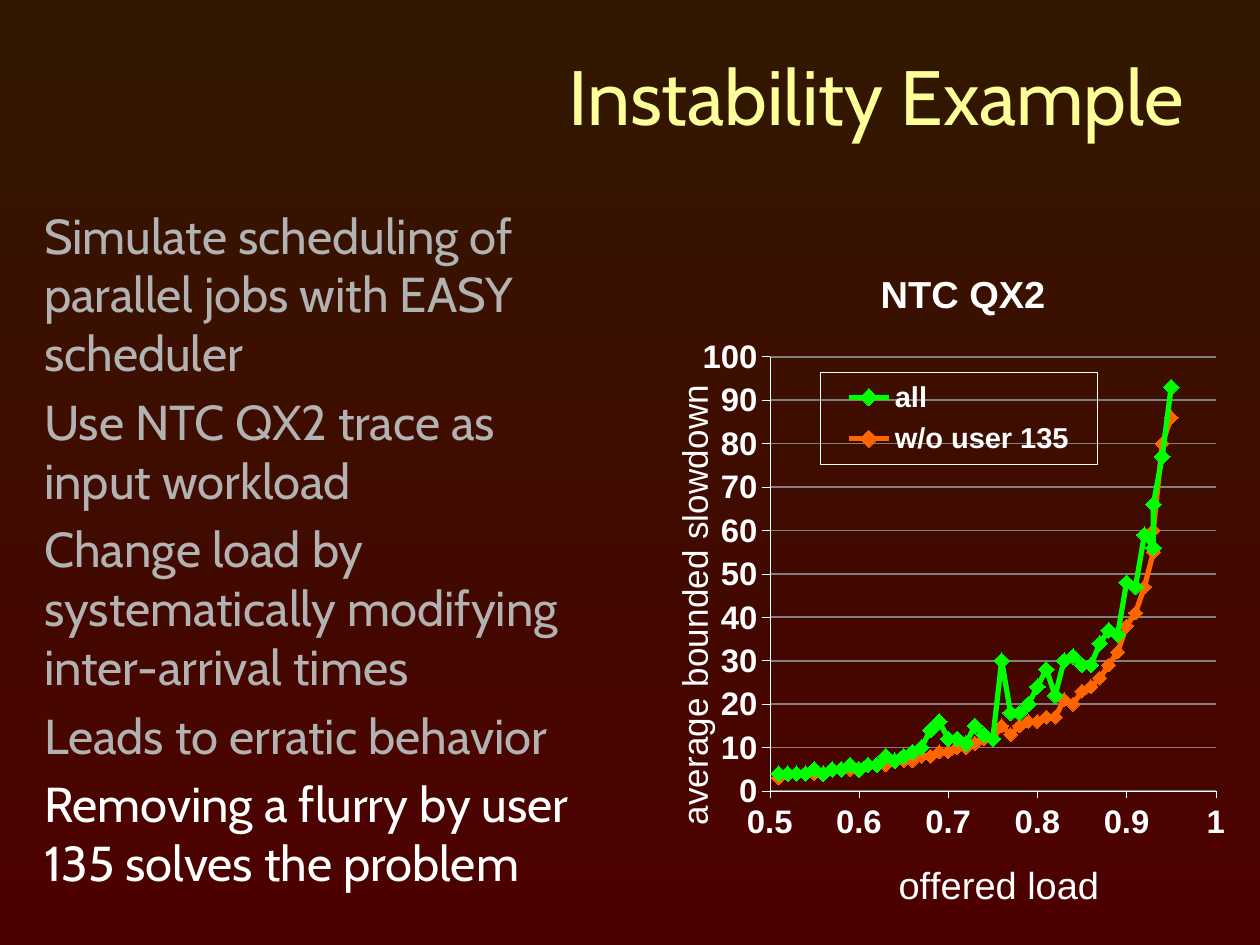
import pptx
import pptx.chart.data
import pptx.dml.color
import pptx.enum.chart
import pptx.enum.text
import pptx.oxml
import pptx.oxml.ns
import pptx.util

Cm = pptx.util.Cm
Pt = pptx.util.Pt

HUES = {
    "top": "311800", "base": "4D0000", "head": "FFFF99", "dim": "B2B2B2",
    "white": "FFFFFF", "grid": "808080", "green": "00FF00", "orange": "FF6600",
}
POINTS = [
    ("Simulate scheduling of parallel jobs with EASY scheduler", "dim"),
    ("Use NTC QX2 trace as input workload", "dim"),
    ("Change load by systematically modifying inter-arrival times", "dim"),
    ("Leads to erratic behavior", "dim"),
    ("Removing a flurry by user 135 solves the problem", "white"),
]
LOADS = [n / 100 for n in [*range(51, 94), 93, 94, 95]]
CURVES = [
    ("all", "green", 9,
     [4, 4, 4, 4, 5, 4, 5, 5, 6, 5, 6, 6, 8, 7, 8, 9, 10, 14, 16, 12, 12, 11, 15,
      13, 12, 30, 18, 18, 20, 24, 28, 22, 30, 31, 29, 29, 34, 37, 36, 48, 47, 59,
      56, 66, 77, 93]),
    ("w/o user 135", "orange", 8,
     [3, 4, 4, 4, 4, 4, 5, 5, 5, 5, 6, 6, 6, 7, 7, 7, 8, 8, 9, 9, 10, 10, 11, 12,
      12, 15, 13, 15, 16, 16, 17, 17, 21, 20, 23, 24, 26, 29, 32, 38, 41, 47, 55,
      60, 80, 86]),
]


def tint(name):
    return pptx.dml.color.RGBColor.from_string(HUES[name])


def style(font, face, size, hue, bold=False):
    font.name = face
    font.size = Pt(size)
    font.bold = bold
    font.color.rgb = tint(hue)


def stroke(line, hue, width):
    line.color.rgb = tint(hue)
    line.width = Pt(width)


def add_back(slide):
    fill = slide.background.fill
    fill.gradient()
    fill.gradient_angle = 270
    for stop, hue in zip(fill.gradient_stops, ("top", "base")):
        stop.color.rgb = tint(hue)


def add_text(slide, box, items, size, align, anchor, gap=0):
    frame = slide.shapes.add_textbox(*map(Cm, box)).text_frame
    frame.word_wrap = True
    frame.vertical_anchor = anchor
    for i, (text, hue) in enumerate(items):
        para = frame.add_paragraph() if i else frame.paragraphs[0]
        para.alignment = align
        para.space_before = Pt(gap)
        run = para.add_run()
        run.text = text
        style(run.font, "Cabin", size, hue)


def place(node, index, **spots):
    for old in node.xpath("./c:layout"):
        node.remove(old)
    modes = "".join(f'<c:{k}Mode val="edge"/>' for k in "xy")
    inner = '<c:layoutTarget val="inner"/>' if index == 0 else ""
    sizes = "".join(f'<c:{k} val="{v}"/>' for k, v in spots.items())
    node.insert(index, pptx.oxml.parse_xml(
        f'<c:layout {pptx.oxml.ns.nsdecls("c")}><c:manualLayout>'
        f'{inner}{modes}{sizes}</c:manualLayout></c:layout>'))


def label(owner, frame, text, size, bold=False):
    run = frame.paragraphs[0].add_run()
    run.text = text
    style(run.font, "Arial", size, "white", bold)


def set_axis(axis, low, high, step, text, size):
    axis.minimum_scale, axis.maximum_scale = low, high
    axis.major_unit = step
    axis.has_major_gridlines = False
    axis.major_tick_mark = pptx.enum.chart.XL_TICK_MARK.OUTSIDE
    axis.minor_tick_mark = pptx.enum.chart.XL_TICK_MARK.NONE
    axis.tick_labels.number_format = "General"
    axis.tick_labels.number_format_is_linked = False
    style(axis.tick_labels.font, "Arial", 18.8, "white", True)
    stroke(axis.format.line, "white", 0.25)
    label(axis, axis.axis_title.text_frame, text, size)


def set_curve(curve, hue, size):
    curve.smooth = False
    stroke(curve.format.line, hue, 3)
    mark = curve.marker
    mark.style = pptx.enum.chart.XL_MARKER_STYLE.DIAMOND
    mark.size = size
    mark.format.fill.solid()
    mark.format.fill.fore_color.rgb = tint(hue)
    mark.format.line.color.rgb = tint(hue)


def set_key(chart):
    chart.has_legend = True
    chart.legend.position = pptx.enum.chart.XL_LEGEND_POSITION.RIGHT
    chart.legend.include_in_layout = False
    style(chart.legend.font, "Arial", 16.6, "white", True)
    key = chart.element.xpath("//c:legend")[0]
    place(key, 1, x=0.29, y=0.235, w=0.465, h=0.13)
    key.xpath("./c:txPr")[0].addprevious(pptx.oxml.parse_xml(
        f'<c:spPr {pptx.oxml.ns.nsdecls("c", "a")}><a:noFill/><a:ln w="3175">'
        f'<a:solidFill><a:srgbClr val="{HUES["white"]}"/></a:solidFill>'
        '</a:ln></c:spPr>'))


def add_graph(slide, box):
    data = pptx.chart.data.XyChartData()
    for name, _, _, vals in CURVES:
        line = data.add_series(name)
        for load, val in zip(LOADS, vals):
            line.add_data_point(load, val)
    kind = pptx.enum.chart.XL_CHART_TYPE.XY_SCATTER_LINES
    chart = slide.shapes.add_chart(kind, *map(Cm, box), data).chart
    style(chart.font, "Arial", 18, "white", True)
    chart.has_title = True
    label(chart, chart.chart_title.text_frame, "NTC QX2", 21.7, True)
    set_axis(chart.category_axis, 0.5, 1, 0.1, "offered load", 21.7)
    set_axis(chart.value_axis, 0, 100, 10, "average bounded slowdown", 20.2)
    chart.value_axis.has_major_gridlines = True
    stroke(chart.value_axis.major_gridlines.format.line, "grid", 1)
    plot = chart.plots[0]
    plot.vary_by_categories = False
    for curve, (_, hue, size, _) in zip(plot.series, CURVES):
        set_curve(curve, hue, size)
    set_key(chart)
    place(chart.element.xpath("//c:plotArea")[0], 0,
          x=0.205, y=0.213, w=0.75, h=0.617)
    heads = chart.element.xpath("//c:title")
    for head, (x, y) in zip(heads, [(0.38, 0.08), (0.41, 0.92), (0.03, 0.25)]):
        place(head, 1, x=x, y=y)
    heads[2].xpath(".//a:bodyPr")[0].set("rot", "-5400000")


def main():
    deck = pptx.Presentation()
    deck.slide_width, deck.slide_height = Cm(25.4), Cm(19.05)
    slide = deck.slides.add_slide(deck.slide_layouts[6])
    align = pptx.enum.text.PP_ALIGN
    anchor = pptx.enum.text.MSO_ANCHOR
    add_back(slide)
    add_text(slide, (1.27, 0.64, 22.86, 2.54), [("Instability Example", "head")],
             44, align.RIGHT, anchor.MIDDLE)
    add_text(slide, (0.64, 4.01, 11.96, 14.61), POINTS,
             28, align.LEFT, anchor.TOP, 5.6)
    add_graph(slide, (13.06, 4.17, 11.99, 14.35))
    deck.save("out.pptx")


if __name__ == "__main__":
    main()
